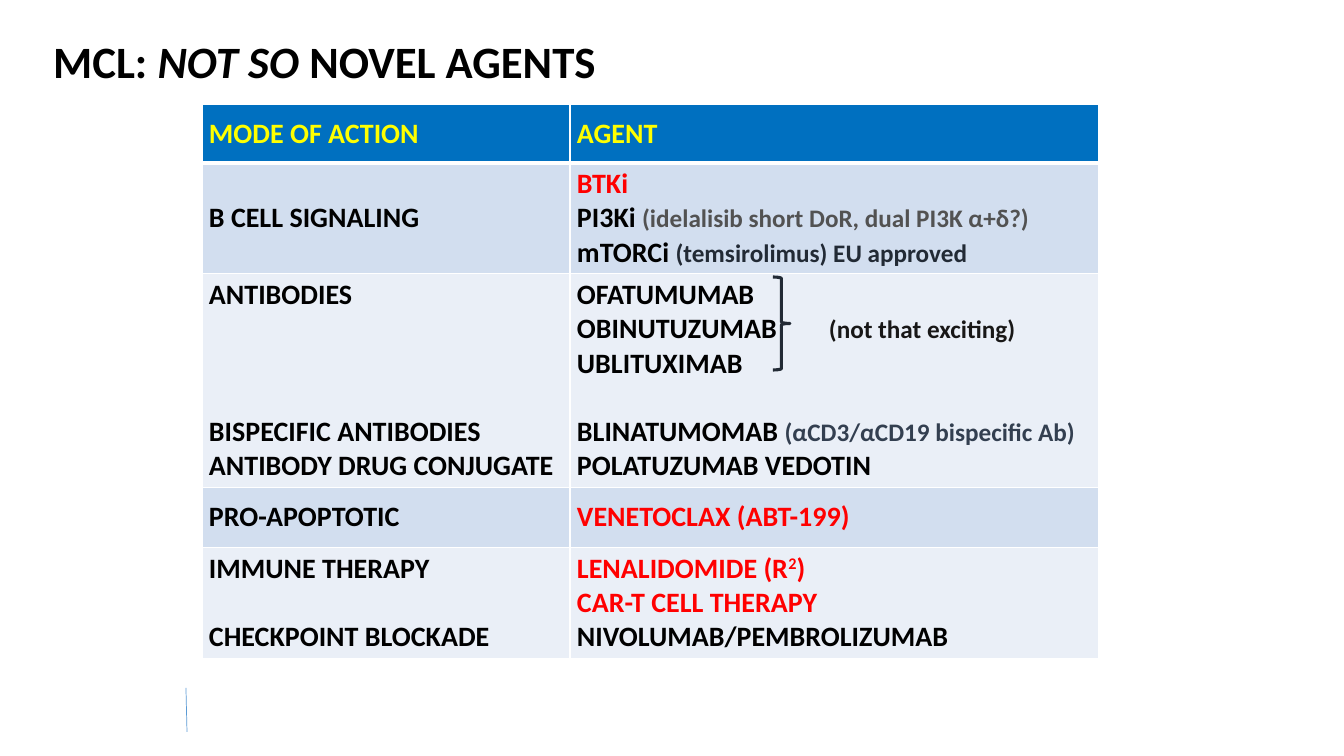
from lxml import etree
from pptx import Presentation
from pptx import util as u
from pptx.dml.color import RGBColor
from pptx.enum import shapes, text
from pptx.oxml import ns

PX = 914400 / 100.8
BLACK = RGBColor(0x00, 0x00, 0x00)
RED = RGBColor(0xFF, 0x00, 0x00)
YELLOW = RGBColor(0xFF, 0xFF, 0x00)
HEADER_BLUE = RGBColor(0x00, 0x70, 0xC0)
BAND_DARK = RGBColor(0xD2, 0xDE, 0xEF)
BAND_LIGHT = RGBColor(0xEA, 0xEF, 0xF7)
GRAY = RGBColor(0x52, 0x52, 0x52)
NAVY = RGBColor(0x22, 0x2A, 0x35)
SLATE = RGBColor(0x33, 0x3F, 0x50)
CHARCOAL = RGBColor(0x18, 0x17, 0x17)
ACCENT = RGBColor(0x5B, 0x9B, 0xD5)
LINE_PT = 24.4  # height of one line of 20 pt text


def px(*lengths):
    return [u.Emu(round(n * PX)) for n in lengths]


def add_run(paragraph, words, size, color):
    run = paragraph.add_run()
    run.text = words
    run.font.name = "Calibri"
    run.font.size = u.Pt(size)
    run.font.bold = True
    run.font.color.rgb = color
    return run


deck = Presentation()
deck.slide_width, deck.slide_height = px(1344, 756)
slide = deck.slides.add_slide(deck.slide_layouts[5])

# Accent line at the bottom
accent_line = slide.shapes.add_connector(
    shapes.MSO_CONNECTOR.STRAIGHT, *px(186, 688, 187, 732))
accent_line.line.color.rgb = ACCENT
accent_line.line.width = u.Pt(0.5)
etree.SubElement(accent_line._element.spPr, ns.qn("a:effectLst"))

# Title
title = slide.shapes.title
title.left, title.top, title.width, title.height = px(43, 24, 1159, 79)
title.text_frame.vertical_anchor = text.MSO_ANCHOR.MIDDLE
heading = title.text_frame.paragraphs[0]
heading.alignment = text.PP_ALIGN.LEFT
heading.line_spacing = 0.9
for words, italic in (("MCL: ", False), ("NOT SO ", True), ("NOVEL AGENTS", False)):
    add_run(heading, words, 32, BLACK).font.italic = italic

# Table content: a cell is a list of lines (lines skipped above, runs),
# and a run is (words, size, color)
rows = [
    (59, HEADER_BLUE,
     [(0, [("MODE OF ACTION", 20, YELLOW)])],
     [(0, [("AGENT", 20, YELLOW)])]),
    (110, BAND_DARK,
     [(0, [("B CELL SIGNALING", 20, BLACK)])],
     [(0, [("BTKi", 20, RED)]),
      (0, [("PI3Ki ", 20, BLACK),
           ("(idelalisib short DoR, dual PI3K α+δ?)", 18, GRAY)]),
      (0, [("mTORCi ", 20, BLACK), ("(temsirolimus) EU approved", 18, NAVY)])]),
    (213, BAND_LIGHT,
     [(0, [("ANTIBODIES", 20, BLACK)]),
      (3, [("BISPECIFIC ANTIBODIES", 20, BLACK)]),
      (0, [("ANTIBODY DRUG CONJUGATE", 20, BLACK)])],
     [(0, [("OFATUMUMAB", 20, BLACK)]),
      (0, [("OBINUTUZUMAB\t", 20, BLACK), ("(not that exciting)", 18, CHARCOAL)]),
      (0, [("UBLITUXIMAB", 20, BLACK)]),
      (1, [("BLINATUMOMAB ", 20, BLACK),
           ("(αCD3/αCD19 bispecific Ab)", 18, SLATE)]),
      (0, [("POLATUZUMAB VEDOTIN", 20, BLACK)])]),
    (60, BAND_DARK,
     [(0, [("PRO-APOPTOTIC", 20, BLACK)])],
     [(0, [("VENETOCLAX (ABT-199)", 20, RED)])]),
    (111, BAND_LIGHT,
     [(0, [("IMMUNE THERAPY", 20, BLACK)]),
      (1, [("CHECKPOINT BLOCKADE", 20, BLACK)])],
     [(0, [("LENALIDOMIDE (R", 20, RED), ("2", 20, RED), (")", 20, RED)]),
      (0, [("CAR-T CELL THERAPY", 20, RED)]),
      (0, [("NIVOLUMAB/PEMBROLIZUMAB", 20, BLACK)])]),
]

# Table
agents = slide.shapes.add_table(len(rows), 2, *px(202, 104, 897, 553)).table
agents.columns[0].width, agents.columns[1].width = px(368, 529)
for r, (height, fill, *contents) in enumerate(rows):
    agents.rows[r].height = px(height)[0]
    for c, lines in enumerate(contents):
        cell = agents.cell(r, c)
        cell.vertical_anchor = text.MSO_ANCHOR.MIDDLE
        cell.margin_left, cell.margin_right, cell.margin_top, cell.margin_bottom = px(7, 7, 4, 4)

        # White borders, thicker around the foot of the header
        for side in ("lnL", "lnR", "lnT", "lnB"):
            thick = (r, side) in ((0, "lnB"), (1, "lnT"))
            border = etree.SubElement(cell._tc.get_or_add_tcPr(), ns.qn("a:" + side),
                                      w=str(u.Pt(3 if thick else 1)))
            solid = etree.SubElement(border, ns.qn("a:solidFill"))
            etree.SubElement(solid, ns.qn("a:srgbClr"), val="FFFFFF")
        cell.fill.solid()
        cell.fill.fore_color.rgb = fill

        for i, (skipped, runs) in enumerate(lines):
            frame = cell.text_frame
            line = frame.paragraphs[0] if i == 0 else frame.add_paragraph()
            if skipped:
                line.space_before = u.Pt(skipped * LINE_PT)
            if "\t" in runs[0][0]:
                tabs = etree.SubElement(line._p.get_or_add_pPr(), ns.qn("a:tabLst"))
                etree.SubElement(tabs, ns.qn("a:tab"), pos=str(px(252)[0]), algn="l")
            for words, size, color in runs:
                run = add_run(line, words, size, color)
                if words == "2":
                    run._r.get_or_add_rPr().set("baseline", "30000")

# Brace joining the three antibodies
brace = slide.shapes.add_shape(shapes.MSO_SHAPE.RIGHT_BRACE, *px(773, 277, 17, 93))
brace.shadow.inherit = False
brace.fill.background()
brace.line.color.rgb = NAVY
brace.line.width = u.Pt(2.25)

deck.save("out.pptx")
